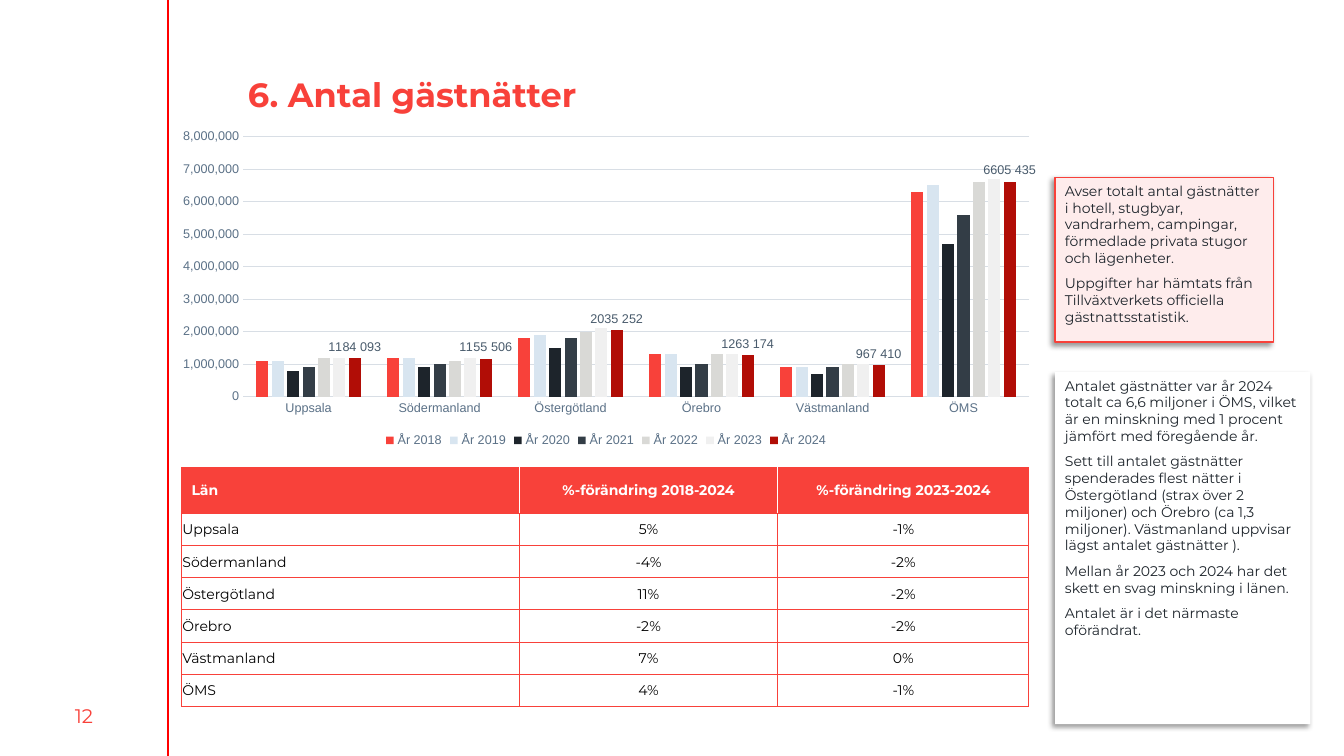
from lxml import etree
from pptx import Presentation
from pptx.chart.data import CategoryChartData
from pptx.dml.color import RGBColor
from pptx.enum.chart import XL_CHART_TYPE, XL_LABEL_POSITION, XL_LEGEND_POSITION, XL_TICK_MARK
from pptx.enum.shapes import MSO_CONNECTOR, MSO_SHAPE
from pptx.enum.text import MSO_ANCHOR, MSO_AUTO_SIZE, PP_ALIGN
from pptx.oxml import parse_xml
from pptx.oxml.ns import nsdecls, qn
from pptx.util import Inches, Pt

COLUMN = XL_CHART_TYPE.COLUMN_CLUSTERED
OUTSIDE = XL_LABEL_POSITION.OUTSIDE_END
BOTTOM = XL_LEGEND_POSITION.BOTTOM
NO_TICK = XL_TICK_MARK.NONE
RECT, STRAIGHT = MSO_SHAPE.RECTANGLE, MSO_CONNECTOR.STRAIGHT
TOP, MIDDLE = MSO_ANCHOR.TOP, MSO_ANCHOR.MIDDLE
LEFT, CENTER = PP_ALIGN.LEFT, PP_ALIGN.CENTER
NO_FIT = MSO_AUTO_SIZE.NONE

WIDE, HIGH = 13.33, 7.5
COLS, ROWS = 160, 90
RED, ROSE, INK, GREY, RULE = "F8413A", "FEECEC", "1D242B", "5B7187", "D8DEE5"

COUNTIES = ["Uppsala", "Södermanland", "Östergötland", "Örebro", "Västmanland", "ÖMS"]
# Guest nights in thousands, by county
NIGHTS = [
    ("År 2018", RED, [1100, 1200, 1800, 1300, 900, 6300]),
    ("År 2019", "D8E5F0", [1100, 1200, 1900, 1300, 900, 6500]),
    ("År 2020", INK, [800, 900, 1500, 900, 700, 4700]),
    ("År 2021", "333D46", [900, 1000, 1800, 1000, 900, 5600]),
    ("År 2022", "D9D9D6", [1200, 1100, 2000, 1300, 1000, 6600]),
    ("År 2023", "F0F0F0", [1200, 1200, 2100, 1300, 1000, 6700]),
    ("År 2024", "B10D06", [1184.093, 1155.506, 2035.252, 1263.174, 967.41, 6605.435]),
]
HEADS = ["Län", "%-förändring 2018-2024", "%-förändring 2023-2024"]
CHANGE = [("5%", "-1%"), ("-4%", "-2%"), ("11%", "-2%"),
          ("-2%", "-2%"), ("7%", "0%"), ("4%", "-1%")]
ABOUT = [
    "Avser totalt antal gästnätter i hotell, stugbyar, vandrarhem, campingar, "
    "förmedlade privata stugor och lägenheter.",
    "Uppgifter har hämtats från Tillväxtverkets officiella gästnattsstatistik.",
]
RESULTS = [
    "Antalet gästnätter var år 2024 totalt ca 6,6 miljoner i ÖMS, vilket är en "
    "minskning med 1 procent jämfört med föregående år.",
    "Sett till antalet gästnätter spenderades flest nätter i Östergötland (strax "
    "över 2 miljoner) och Örebro (ca 1,3 miljoner). Västmanland uppvisar lägst "
    "antalet gästnätter ).",
    "Mellan år 2023 och 2024 har det skett en svag minskning i länen.",
    "Antalet är i det närmaste oförändrat.",
]


def rgb(code):
    return RGBColor.from_string(code)


def style(font, size, color, face, bold=False):
    font.size, font.name, font.bold = Pt(size), face, bold
    font.color.rgb = rgb(color)


def write(frame, lines, size=10, color=INK, bold=False, align=LEFT,
          anchor=TOP, gap=0, face="Montserrat"):
    """Fill a text frame, one paragraph a line; gap is the space before and after."""
    frame.word_wrap = True
    frame.vertical_anchor = anchor
    for i, line in enumerate(lines):
        para = frame.paragraphs[0] if i == 0 else frame.add_paragraph()
        para.alignment = align
        para.space_before, para.space_after = Pt(gap if i else 0), Pt(gap)
        run = para.add_run()
        run.text = line
        style(run.font, size, color, face, bold)


def edge(cell, sides):
    """Draw cell borders from a dict of side letter to colour."""
    props = cell._tc.get_or_add_tcPr()
    for i, side in enumerate("LRTB"):
        props.insert(i, parse_xml(
            f'<a:ln{side} {nsdecls("a")} w="9525"><a:solidFill>'
            f'<a:srgbClr val="{sides.get(side, RED)}"/></a:solidFill></a:ln{side}>'))


class Page:
    """Holds the deck, its slide and a grid of 160 columns by 90 rows."""

    def __init__(self):
        self.deck = Presentation()
        self.deck.slide_width, self.deck.slide_height = Inches(WIDE), Inches(HIGH)
        self.slide = self.deck.slides.add_slide(self.deck.slide_layouts[5])
        self.shapes = self.slide.shapes

    def x(self, cols):
        return Inches(WIDE * cols / COLS)

    def y(self, rows):
        return Inches(HIGH * rows / ROWS)

    def area(self, left, top, width, height):
        return self.x(left), self.y(top), self.x(width), self.y(height)

    def title(self, text, *area):
        shape = self.shapes.title
        shape.left, shape.top, shape.width, shape.height = self.area(*area)
        frame = shape.text_frame
        frame.auto_size = NO_FIT
        frame.margin_left = frame.margin_right = Inches(0.05)
        write(frame, [text], size=24, color=RED, bold=True)

    def label(self, text, *area, **form):
        write(self.shapes.add_textbox(*self.area(*area)).text_frame, [text], **form)

    def rule(self, col, color):
        line = self.shapes.add_connector(STRAIGHT, self.x(col), 0, self.x(col), self.y(ROWS))
        line.line.color.rgb, line.line.width = rgb(color), Pt(0.75)
        etree.SubElement(line._element.spPr, qn("a:effectLst"))

    def note(self, lines, *area, fill, line=None):
        """Add a box of text with a soft shadow down to the left."""
        box = self.shapes.add_shape(RECT, *self.area(*area))
        box.fill.solid()
        box.fill.fore_color.rgb = rgb(fill)
        if line:
            box.line.color.rgb, box.line.width = rgb(line), Pt(1)
        else:
            box.line.fill.background()
        box._element.spPr.append(parse_xml(
            f'<a:effectLst {nsdecls("a")}><a:outerShdw blurRad="{Pt(4)}" dist="{Pt(3)}" '
            'dir="8100000" algn="tr" rotWithShape="0"><a:srgbClr val="000000">'
            '<a:alpha val="40000"/></a:srgbClr></a:outerShdw></a:effectLst>'))
        write(box.text_frame, lines, gap=3)

    def table(self, rows, left, top, widths, heights):
        area = self.area(left, top, sum(widths), sum(heights))
        grid = self.shapes.add_table(len(rows), len(widths), *area).table
        for col, width in zip(grid.columns, widths):
            col.width = self.x(width)
        for row, height in zip(grid.rows, heights):
            row.height = self.y(height)
        for r, row in enumerate(rows):
            for c, text in enumerate(row):
                cell, head = grid.cell(r, c), r == 0
                cell.fill.solid()
                cell.fill.fore_color.rgb = rgb(RED if head else "FFFFFF")
                if not head:
                    cell.margin_left = cell.margin_right = cell.margin_top = Inches(0.01)
                    cell.margin_bottom = 0
                write(cell.text_frame, [text], bold=head, align=CENTER if c else LEFT,
                      color="FFFFFF" if head else "000000")
                cell.vertical_anchor = MIDDLE
                inner = {"L": c > 0, "R": c < len(row) - 1}
                edge(cell, {s: "FFFFFF" for s, on in inner.items() if head and on})

    def chart(self, names, series, *area):
        data = CategoryChartData()
        data.categories = names
        for name, _, values in series:
            data.add_series(name, [round(v * 1000) for v in values])
        chart = self.shapes.add_chart(COLUMN, *self.area(*area), data).chart
        style(chart.font, 10, INK, "Arial")
        chart.has_title = False
        chart.has_legend = True
        chart.legend.position, chart.legend.include_in_layout = BOTTOM, False
        style(chart.legend.font, 9, GREY, "Arial")
        cats, vals = chart.category_axis, chart.value_axis
        for axis in (cats, vals):
            axis.major_tick_mark = axis.minor_tick_mark = NO_TICK
            style(axis.tick_labels.font, 9, GREY, "Arial")
        vals.format.line.fill.background()
        vals.tick_labels.number_format = "#,##0"
        vals.tick_labels.number_format_is_linked = False
        for line in (cats.format.line, vals.major_gridlines.format.line):
            line.color.rgb, line.width = rgb(RULE), Pt(0.75)
        plot = chart.plots[0]
        plot.gap_width, plot.overlap, plot.vary_by_categories = 219, -27, False
        for bars, (_, color, _) in zip(plot.series, series):
            bars.format.fill.solid()
            bars.format.fill.fore_color.rgb = rgb(color)
            bars.invert_if_negative = False
        tags = plot.series[len(series) - 1].data_labels
        tags.show_value, tags.position = True, OUTSIDE
        tags.number_format, tags.number_format_is_linked = "#\\ ###", False
        style(tags.font, 9, "495B6C", "Arial")


def main():
    page = Page()
    page.label("12", 0, 82.8, 20, 4.8, size=14, color=RED, align=CENTER, anchor=MIDDLE)
    page.rule(20, "FF0000")
    page.title("6. Antal gästnätter", 28.9, 8.2, 121.4, 10.7)
    page.note(ABOUT, 125.6, 21.1, 26, 19.6, fill=ROSE, line=RED)
    body = [(name, *pair) for name, pair in zip(COUNTIES, CHANGE)]
    page.table([HEADS] + body, 21.6, 55.7, [40.2, 30.8, 29.9], [5.4] + [3.84] * len(body))
    page.note(RESULTS, 125.6, 44.3, 30.4, 41.9, fill="FFFFFF")
    page.chart(COUNTIES, NIGHTS, 19.7, 14.6, 104.9, 39.2)
    page.deck.save("out.pptx")


if __name__ == "__main__":
    main()
